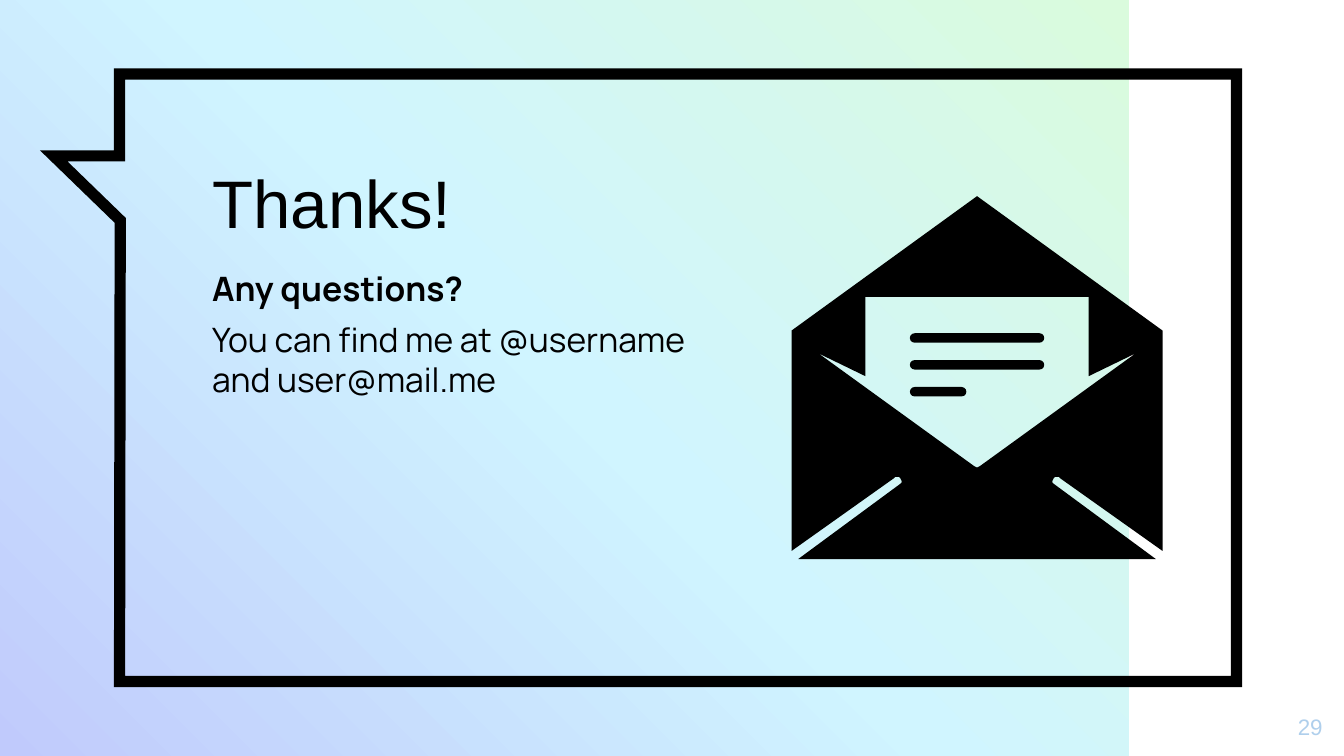
from copy import deepcopy
from dataclasses import dataclass

from lxml.etree import SubElement
from pptx import Presentation
from pptx.dml.color import RGBColor
from pptx.enum.shapes import MSO_SHAPE
from pptx.enum.text import MSO_ANCHOR, MSO_AUTO_SIZE, PP_ALIGN
from pptx.oxml.ns import qn
from pptx.util import Inches, Pt


@dataclass(frozen=True)
class Theme:
    ink: str = "000000"
    number: str = "AFCFEC"
    gradient: tuple = ("C0CAFC", "D0F5FF", "DAFBDD")
    head_font: str = "Arial"
    body_font: str = "Manrope"
    title_size: int = 36
    body_size: int = 18
    number_size: int = 12
    frame_width: int = 6


THEME = Theme()
WIDTH = Inches(10)
HEIGHT = WIDTH * 9 // 16
SLIDE = (0, 0, WIDTH, HEIGHT)
GRID = (1000, 562.5)


def part(box, grid, x, y, w, h):
    left, top, width, height = box
    col, row = width / grid[0], height / grid[1]
    return (round(left + x * col), round(top + y * row),
            round(w * col), round(h * row))


def paint(sp, fill=None, line=None):
    sp.shadow.inherit = False
    for fmt, color in ((sp.fill, fill), (sp.line.fill, line)):
        if color:
            fmt.solid()
            fmt.fore_color.rgb = RGBColor.from_string(color)
        else:
            fmt.background()


def outline(shapes, box, grid, contours):
    placed = [[part(box, grid, x, y, 0, 0)[:2] for x, y in points]
              for points in contours]
    builder = shapes.build_freeform(*placed[0][0], scale=1.0)
    for i, points in enumerate(placed):
        if i:
            builder.move_to(*points[0])
        builder.add_line_segments(points[1:], close=True)
    return builder.convert_to_shape()


def write(sp, box, paragraphs, font, size, color, anchor,
          align=PP_ALIGN.LEFT, before=0):
    sp.left, sp.top, sp.width, sp.height = box
    tf = sp.text_frame
    frame = dict.fromkeys(
        ("margin_left", "margin_top", "margin_right", "margin_bottom"), Inches(0.1))
    frame.update(word_wrap=True, auto_size=MSO_AUTO_SIZE.NONE, vertical_anchor=anchor)
    for name, value in frame.items():
        setattr(tf, name, value)
    for i, (text, bold) in enumerate(paragraphs):
        p = tf.add_paragraph() if i else tf.paragraphs[0]
        p.alignment, p.space_before = align, Pt(before)
        r = p.add_run()
        r.text = text
        for name, value in dict(name=font, size=Pt(size), bold=bold).items():
            setattr(r.font, name, value)
        r.font.color.rgb = RGBColor.from_string(color)


def add_backdrop(s, box):
    sp = s.shapes.add_shape(MSO_SHAPE.RECTANGLE, *box)
    paint(sp)
    sp.fill.gradient()
    sp.fill.gradient_angle = 45
    stops = sp._element.spPr.find(qn("a:gradFill")).find(qn("a:gsLst"))
    stops.append(deepcopy(stops[-1]))
    for i, (stop, color) in enumerate(zip(sp.fill.gradient_stops, THEME.gradient)):
        stop.position = i / 2
        stop.color.rgb = RGBColor.from_string(color)


def add_bubble(s, box):
    points = [(49, 0), (880, 0), (880, 452), (49, 452), (49.5, 109), (0, 61), (49, 61)]
    sp = outline(s.shapes, box, (880, 452), [points])
    paint(sp, line=THEME.ink)
    sp.line.width = Pt(THEME.frame_width)
    SubElement(sp.line._get_or_add_ln(), qn("a:miter"), lim="800000")


def add_message(s, box):
    grid = (396, 309)
    title = s.shapes.title
    s.shapes._spTree.append(title._element)
    write(title, part(box, grid, 0, 0, 396, 81), [("Thanks!", False)],
          THEME.head_font, THEME.title_size, THEME.ink, MSO_ANCHOR.BOTTOM)
    body = part(box, grid, 0, 80, 396, 229)
    lines = [("Any questions?", True),
             ("You can find me at @username and user@mail.me", False)]
    write(s.shapes.add_textbox(*body), body, lines, THEME.body_font,
          THEME.body_size, THEME.ink, MSO_ANCHOR.TOP, before=6)


def add_envelope(s, box):
    half, rows = 138, 270
    grid = (2 * half, rows)
    letter = [(0, 75), (83, 75), (83, 134), (118, 117), (2, 201), (0, 202)]
    cover = [(0, 0), (138, 100), (138, 264), (62, 210), (61, 209), (58, 209),
             (57, 210), (56, 212), (56, 213), (57, 214), (133, 270), (0, 270)]
    contours = [[(half + x, y) for x, y in side]
                + [(half - x, y) for x, y in reversed(side)]
                for side in (letter, cover)]
    group = s.shapes.add_group_shape()
    paint(outline(group.shapes, box, grid, contours), THEME.ink)
    for i, width in enumerate((100, 100, 42)):
        bar = part(box, grid, 88, 102 + 20 * i, width, 7)
        sp = group.shapes.add_shape(MSO_SHAPE.ROUNDED_RECTANGLE, *bar)
        sp.adjustments[0] = 0.5
        paint(sp, THEME.ink)


def add_number(s, box):
    write(s.shapes.add_textbox(*box), box, [("29", False)], THEME.head_font,
          THEME.number_size, THEME.number, MSO_ANCHOR.MIDDLE, PP_ALIGN.RIGHT)


def main():
    prs = Presentation()
    prs.slide_width, prs.slide_height = WIDTH, HEIGHT
    s = prs.slides.add_slide(prs.slide_layouts[5])
    add_backdrop(s, part(SLIDE, GRID, 0, 0, 840, 562.5))
    add_bubble(s, part(SLIDE, GRID, 40, 55, 880, 452))
    add_message(s, part(SLIDE, GRID, 148, 109, 396, 309))
    add_envelope(s, part(SLIDE, GRID, 589, 146, 276, 270))
    add_number(s, part(SLIDE, GRID, 934, 519, 60, 43))
    prs.save("out.pptx")


if __name__ == "__main__":
    main()
